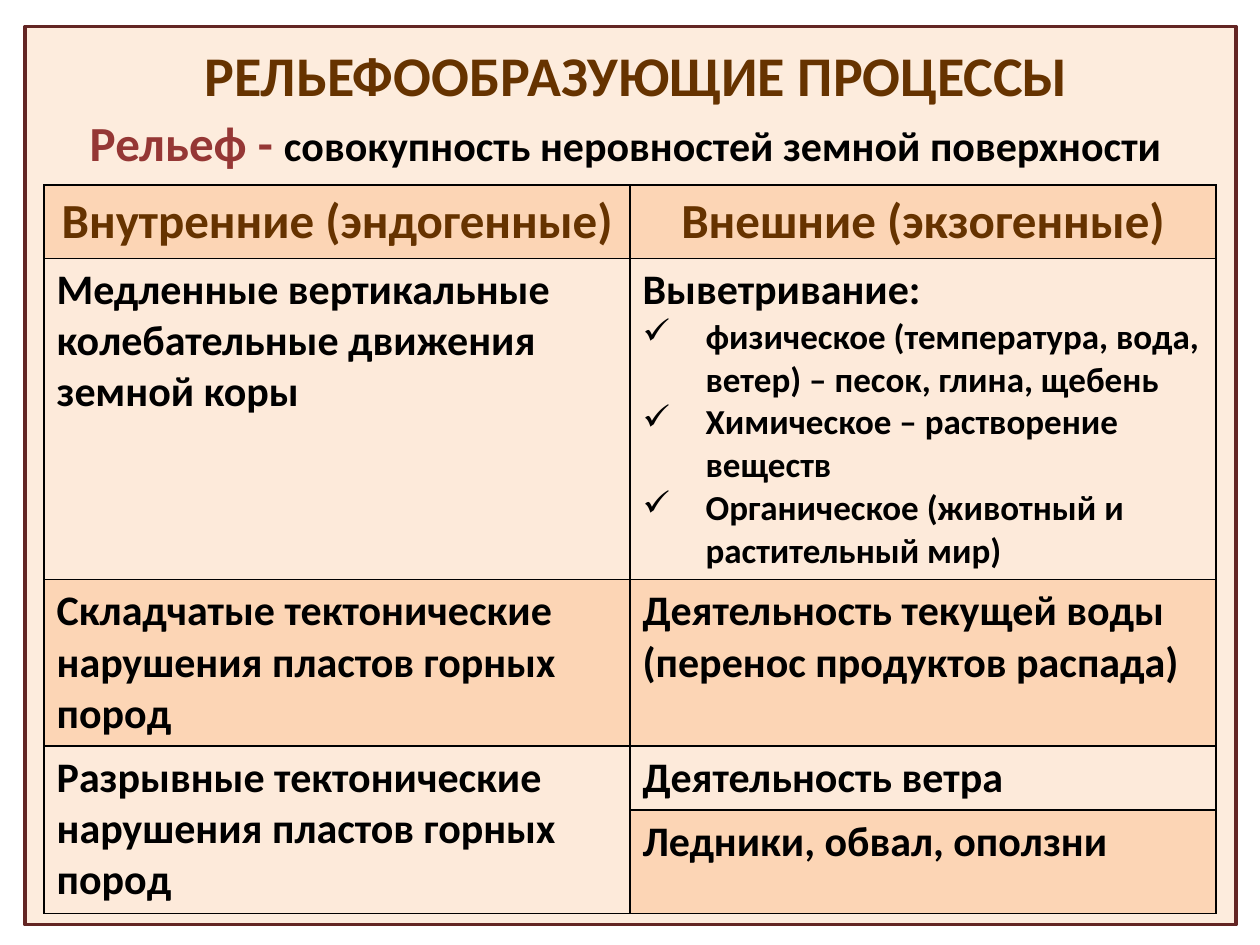
from dataclasses import dataclass

import lxml.etree
import pptx
import pptx.dml.color
import pptx.enum.shapes
import pptx.enum.text
import pptx.oxml.ns
import pptx.slide
import pptx.table
import pptx.text.text
import pptx.util

Inches = pptx.util.Inches
Align = pptx.enum.text.PP_ALIGN
qn = pptx.oxml.ns.qn


@dataclass(frozen=True)
class Theme:
    """Colours, font and type sizes of the slide."""
    font: str = "Calibri"
    brown: str = "663300"
    red: str = "953735"
    ink: str = "000000"
    edge: str = "632523"
    pale: str = "FDEADA"
    peach: str = "FCD5B5"
    title: int = 32
    head: int = 28
    body: int = 24
    item: int = 20


@dataclass(frozen=True)
class Entry:
    """One table cell with its place, text and list items."""
    row: int
    col: int
    text: str
    items: tuple[str, ...] = ()
    span: int = 1


THEME = Theme()
ROWS = (0.58, 2.55, 1.32, 0.51, 0.82)
FILLS = (THEME.peach, THEME.pale, THEME.peach, THEME.pale, THEME.peach)
CELLS = (
    Entry(0, 0, "Внутренние (эндогенные)"),
    Entry(0, 1, "Внешние (экзогенные)"),
    Entry(1, 0, "Медленные вертикальные колебательные движения земной коры"),
    Entry(1, 1, "Выветривание:", (
        "физическое (температура, вода, ветер) – песок, глина, щебень",
        "Химическое – растворение веществ",
        "Органическое (животный и растительный мир)",
    )),
    Entry(2, 0, "Складчатые тектонические нарушения пластов горных пород"),
    Entry(2, 1, "Деятельность текущей воды (перенос продуктов распада)"),
    Entry(3, 0, "Разрывные тектонические нарушения пластов горных пород", span=2),
    Entry(3, 1, "Деятельность ветра"),
    Entry(4, 1, "Ледники, обвал, оползни"),
)


def tint(code: str) -> pptx.dml.color.RGBColor:
    """Turn a hex code into a colour."""
    return pptx.dml.color.RGBColor.from_string(code)


def style(font: pptx.text.text.Font, size: int, code: str) -> None:
    """Apply the bold theme font in a size and colour."""
    font.name = THEME.font
    font.size = pptx.util.Pt(size)
    font.bold = True
    font.color.rgb = tint(code)


def tick(para: pptx.text.text._Paragraph) -> None:
    """Give a paragraph a hanging check mark."""
    props = para._p.get_or_add_pPr()
    props.set("marL", str(Inches(0.5)))
    props.set("indent", str(-Inches(0.5)))
    lxml.etree.SubElement(props, qn("a:buChar"), char="✓")


def border(cell: pptx.table._Cell) -> None:
    """Draw a thin line on all four sides of a cell."""
    props = cell._tc.get_or_add_tcPr()
    for side in ("lnL", "lnR", "lnT", "lnB"):
        line = lxml.etree.SubElement(props, qn(f"a:{side}"), w=str(pptx.util.Pt(1)))
        fill = lxml.etree.SubElement(line, qn("a:solidFill"))
        lxml.etree.SubElement(fill, qn("a:srgbClr"), val=THEME.ink)


def draw_frame(slide: pptx.slide.Slide) -> None:
    """Place the tinted panel behind everything else."""
    frame = slide.shapes.add_shape(
        pptx.enum.shapes.MSO_SHAPE.RECTANGLE,
        Inches(0.2), Inches(0.21), Inches(9.61), Inches(7.13))
    frame.shadow.inherit = False
    frame.fill.solid()
    frame.fill.fore_color.rgb = tint(THEME.pale)
    shade = frame._element.spPr.find(".//" + qn("a:srgbClr"))
    lxml.etree.SubElement(shade, qn("a:alpha"), val="90000")
    frame.line.color.rgb = tint(THEME.edge)
    frame.line.width = pptx.util.Pt(2)
    slide.shapes._spTree.insert(2, frame._element)


def draw_title(slide: pptx.slide.Slide) -> None:
    """Fill and place the title."""
    title = slide.shapes.title
    title.left, title.top = Inches(0.55), Inches(0.36)
    title.width, title.height = Inches(9), Inches(0.45)
    frame = title.text_frame
    frame.text = "РЕЛЬЕФООБРАЗУЮЩИЕ ПРОЦЕССЫ"
    frame.vertical_anchor = pptx.enum.text.MSO_ANCHOR.MIDDLE
    para = frame.paragraphs[0]
    para.alignment = Align.CENTER
    style(para.runs[0].font, THEME.title, THEME.brown)


def draw_cell(table: pptx.table.Table, entry: Entry) -> None:
    """Write one cell and its list."""
    cell = table.cell(entry.row, entry.col)
    if entry.span > 1:
        cell.merge(table.cell(entry.row + entry.span - 1, entry.col))
    head = entry.row == 0
    frame = cell.text_frame
    frame.text = "\n".join((entry.text, *entry.items))
    for rank, para in enumerate(frame.paragraphs):
        para.alignment = Align.CENTER if head else Align.LEFT
        if rank:
            tick(para)
        size = THEME.head if head else THEME.item if rank else THEME.body
        code = THEME.brown if head else THEME.ink
        style(para.font, size, code)
        style(para.runs[0].font, size, code)


def draw_table(slide: pptx.slide.Slide) -> None:
    """Build the table of processes."""
    table = slide.shapes.add_table(
        len(ROWS), 2, Inches(0.35), Inches(1.47),
        Inches(9.3), Inches(sum(ROWS))).table
    table.first_row = table.horz_banding = False
    for row, high, code in zip(table.rows, ROWS, FILLS):
        row.height = Inches(high)
        for cell in row.cells:
            border(cell)
            cell.fill.solid()
            cell.fill.fore_color.rgb = tint(code)
    for entry in CELLS:
        draw_cell(table, entry)


def draw_term(slide: pptx.slide.Slide) -> None:
    """Write the definition under the title."""
    box = slide.shapes.add_textbox(
        Inches(0.12), Inches(0.84), Inches(9.69), Inches(0.57))
    box.text_frame.word_wrap = True
    para = box.text_frame.paragraphs[0]
    para.alignment = Align.CENTER
    for text, size, code in (
        ("Рельеф - ", THEME.head, THEME.red),
        ("совокупность неровностей земной поверхности", THEME.body, THEME.ink),
    ):
        run = para.add_run()
        run.text = text
        style(run.font, size, code)


def main() -> None:
    """Build and save the slide."""
    deck = pptx.Presentation()
    deck.slide_width, deck.slide_height = Inches(10), Inches(7.5)
    slide = deck.slides.add_slide(deck.slide_layouts[5])
    draw_frame(slide)
    draw_title(slide)
    draw_table(slide)
    draw_term(slide)
    deck.save("out.pptx")


if __name__ == "__main__":
    main()
